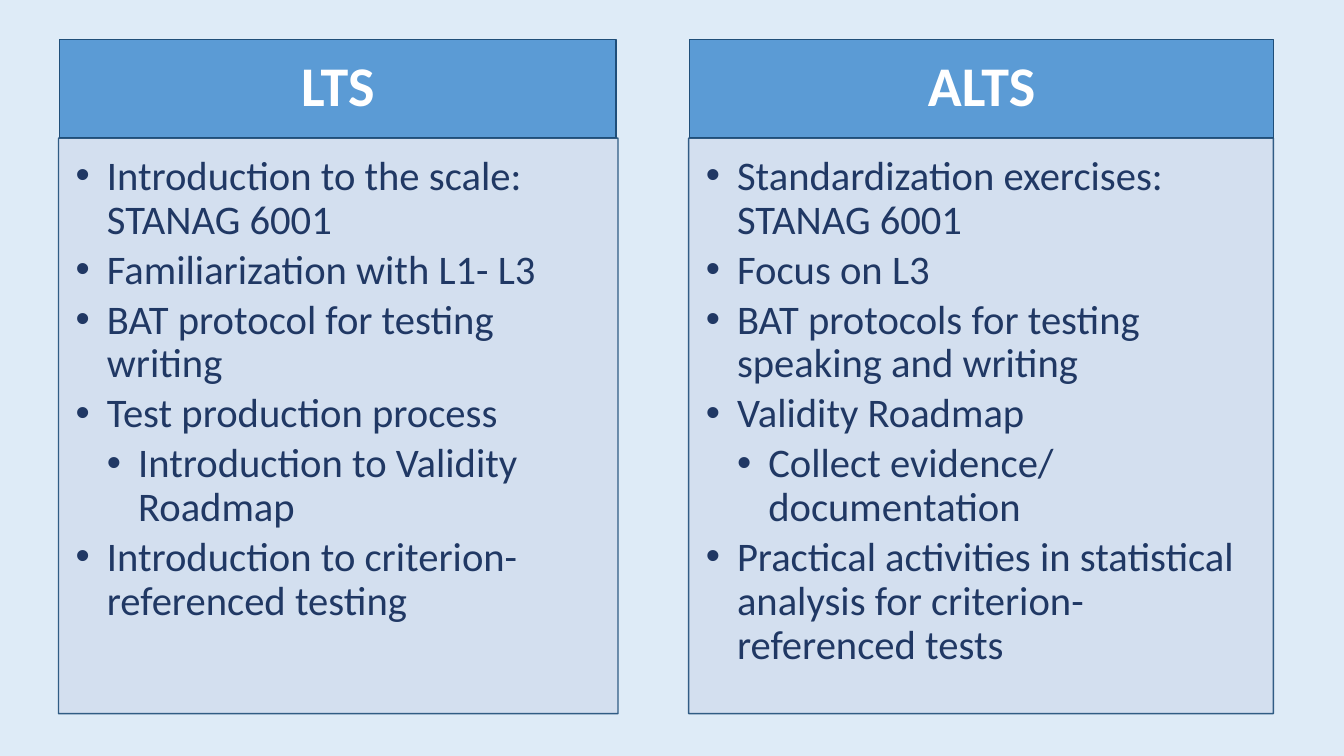
from dataclasses import dataclass

from lxml import etree
from pptx import Presentation
from pptx import util as u
from pptx.dml.color import RGBColor
from pptx.enum import text as t
from pptx.oxml import ns

# Content: panel title, left and width of header and list, (level, text) items
PANELS = [
    ("LTS", (0.59, 5.52), (0.58, 5.55), [
        (0, "Introduction to the scale: STANAG 6001"),
        (0, "Familiarization with L1- L3"),
        (0, "BAT protocol for testing writing"),
        (0, "Test production process"),
        (1, "Introduction to Validity Roadmap"),
        (0, "Introduction to criterion-referenced testing"),
    ]),
    ("ALTS", (6.84, 5.79), (6.83, 5.8), [
        (0, "Standardization exercises: STANAG 6001"),
        (0, "Focus on L3"),
        (0, "BAT protocols for testing speaking and writing"),
        (0, "Validity Roadmap"),
        (1, "Collect evidence/ documentation"),
        (0, "Practical activities in statistical analysis for criterion-referenced tests"),
    ]),
]
SLIDE_SIZE = (13.33, 7.5)
HEADER_ROW = (0.39, 0.98)
LIST_ROW = (sum(HEADER_ROW), 5.71)
INDENT = 0.31
COMPARISON_LAYOUT = 4


@dataclass(frozen=True)
class Theme:
    font: str = "Calibri"
    background: str = "DEEBF7"
    header: str = "5B9BD5"
    panel: str = "D2DEEF"
    border: str = "1F4E79"
    title: str = "FFFFFF"
    body: str = "203864"
    title_size: int = 40
    body_size: int = 29
    opacity: int = 90


THEME = Theme()


def rgb(value):
    return RGBColor.from_string(value)


def add_opacity(fill, percent):
    for color in fill.iter(ns.qn("a:srgbClr")):
        etree.SubElement(color, ns.qn("a:alpha"), val=str(percent * 1000))


def format_box(box, column, row, fill, insets, anchor, opacity=100):
    box.left, box.width = map(u.Inches, column)
    box.top, box.height = map(u.Inches, row)
    box.fill.solid()
    box.fill.fore_color.rgb = rgb(fill)
    box.line.color.rgb = rgb(THEME.border)
    box.line.width = u.Pt(1)
    if opacity < 100:
        add_opacity(box.element.spPr, opacity)
    frame = box.text_frame
    frame.word_wrap = True
    frame.auto_size = t.MSO_AUTO_SIZE.NONE
    frame.vertical_anchor = anchor
    (frame.margin_left, frame.margin_top,
     frame.margin_right, frame.margin_bottom) = map(u.Inches, insets)


def write(para, text, size, color, bold=False, align=t.PP_ALIGN.LEFT,
          level=0, after=0, bullet=None):
    para.level = level
    para.alignment = align
    para.line_spacing = 0.9
    para.space_before = u.Pt(0)
    para.space_after = u.Pt(size * after)
    if bullet:
        props = para._p.get_or_add_pPr()
        props.set("marL", str(u.Inches(INDENT * (level + 1))))
        props.set("indent", str(-u.Inches(INDENT)))
        etree.SubElement(props, ns.qn("a:buFont"), typeface="Arial")
        etree.SubElement(props, ns.qn("a:buChar"), char=bullet)
    span = para.add_run()
    span.text = text
    span.font.name = THEME.font
    span.font.size = u.Pt(size)
    span.font.bold = bold
    span.font.color.rgb = rgb(color)


def add_panel(header, listing, title, header_column, list_column, items):
    format_box(header, header_column, HEADER_ROW, THEME.header,
               (0.31, 0.18, 0.31, 0.18), t.MSO_ANCHOR.MIDDLE)
    write(header.text_frame.paragraphs[0], title, THEME.title_size, THEME.title,
          bold=True, align=t.PP_ALIGN.CENTER)

    format_box(listing, list_column, LIST_ROW, THEME.panel,
               (0.17, 0.17, 0.23, 0.25), t.MSO_ANCHOR.TOP, THEME.opacity)
    frame = listing.text_frame
    for number, (level, text) in enumerate(items):
        para = frame.add_paragraph() if number else frame.paragraphs[0]
        write(para, text, THEME.body_size, THEME.body,
              level=level, after=0.15, bullet="•")


def main():
    deck = Presentation()
    deck.slide_width, deck.slide_height = map(u.Inches, SLIDE_SIZE)
    page = deck.slides.add_slide(deck.slide_layouts[COMPARISON_LAYOUT])
    page.background.fill.solid()
    page.background.fill.fore_color.rgb = rgb(THEME.background)

    # The slide has no overall title
    heading, *boxes = page.placeholders
    heading.element.getparent().remove(heading.element)

    # Placeholders alternate: header, list, header, list
    for header, listing, panel in zip(boxes[::2], boxes[1::2], PANELS):
        add_panel(header, listing, *panel)
    deck.save("out.pptx")


if __name__ == "__main__":
    main()
